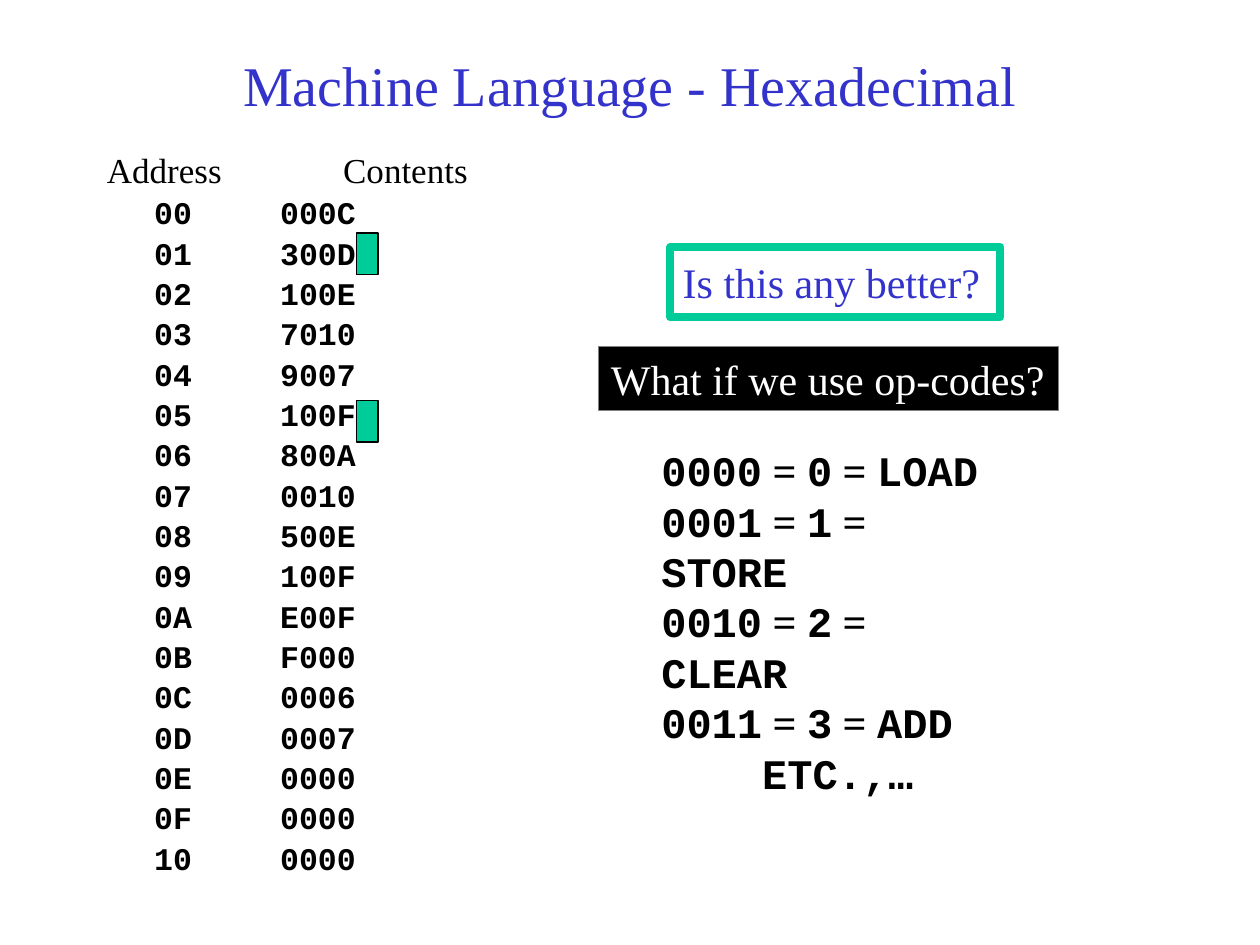
from lxml.etree import SubElement
from pptx import Presentation
from pptx.dml.color import RGBColor
from pptx.enum.shapes import MSO_SHAPE
from pptx.enum.text import MSO_ANCHOR, PP_ALIGN
from pptx.oxml.ns import qn
from pptx.util import Inches, Pt

SERIF, MONO = "Times New Roman", "Courier New"
BLUE, GREEN, BLACK, WHITE, GRAY = "3333CC", "00CC99", "000000", "FFFFFF", "808080"

TITLE = "Machine Language - Hexadecimal"
HEADINGS = ("Address", "Contents")
MEMORY = ["000C", "300D", "100E", "7010", "9007", "100F", "800A", "0010", "500E",
          "100F", "E00F", "F000", "0006", "0007", "0000", "0000", "0000"]
OP_CODES = ["LOAD", "STORE", "CLEAR", "ADD"]
MORE_CODES = "ETC.,…"
MARKER_TOPS = [3.18, 1.85]
# text, box, fill, line colour, line width, text colour
QUESTIONS = [
    ("Is this any better?", (5.32, 1.96, 2.62, 0.56), None, GREEN, 4.5, BLUE),
    ("What if we use op-codes?", (4.75, 2.75, 3.65, 0.51), BLACK, GRAY, 0.75, WHITE),
]


def rgb(value):
    return RGBColor.from_string(value)


def add_run(paragraph, text, size, font=SERIF, color=BLACK):
    """Add a run; the monospaced font is always bold here."""
    run = paragraph.add_run()
    run.text = text
    run.font.color.rgb = rgb(color)
    style = {"name": font, "size": Pt(size), "bold": font == MONO}
    for key, value in style.items():
        setattr(run.font, key, value)


def add_text_frame(slide, box, anchor=MSO_ANCHOR.TOP):
    frame = slide.shapes.add_textbox(*map(Inches, box)).text_frame
    frame.word_wrap = True
    frame.vertical_anchor = anchor
    return frame


def add_rectangle(slide, box, fill, line, width):
    rectangle = slide.shapes.add_shape(MSO_SHAPE.RECTANGLE, *map(Inches, box))
    rectangle.shadow.inherit = False
    if fill:
        rectangle.fill.solid()
        rectangle.fill.fore_color.rgb = rgb(fill)
    else:
        rectangle.fill.background()
    rectangle.line.color.rgb = rgb(line)
    rectangle.line.width = Pt(width)
    return rectangle


def next_paragraph(frame, index):
    return frame.add_paragraph() if index else frame.paragraphs[0]


def set_indent(paragraph, left, first=0):
    properties = paragraph._p.get_or_add_pPr()
    properties.set("marL", str(Inches(left)))
    properties.set("indent", str(Inches(first)))
    return properties


def add_memory(slide):
    frame = add_text_frame(slide, (0.75, 1.17, 8.5, 6))
    rows = [("\t\t".join(HEADINGS), 20, SERIF)]
    rows += [(f"\t{address:02X}\t\t{word}", 18, MONO)
             for address, word in enumerate(MEMORY)]
    for index, row in enumerate(rows):
        paragraph = next_paragraph(frame, index)
        paragraph.line_spacing = 0.9
        properties = set_indent(paragraph, 0.375, -0.375)
        before = SubElement(properties, qn("a:spcBef"))
        SubElement(before, qn("a:spcPct")).set("val", "20000")
        add_run(paragraph, *row)


def add_op_codes(slide):
    frame = add_text_frame(slide, (5.15, 3.48, 2.85, 2.1))
    for code, name in enumerate(OP_CODES):
        paragraph = next_paragraph(frame, code)
        parts = [f"{code:04b}", " = ", str(code), " = ", name]
        for position, part in enumerate(parts):
            add_run(paragraph, part, 24, SERIF if position % 2 else MONO)
            paragraph.runs[-1].font.bold = True
    paragraph = frame.add_paragraph()
    set_indent(paragraph, 0.8)
    add_run(paragraph, MORE_CODES, 24, MONO)


def main():
    deck = Presentation()
    deck.slide_width, deck.slide_height = Inches(10), Inches(7.5)
    slide = deck.slides.add_slide(deck.slide_layouts[6])

    for top in MARKER_TOPS:
        add_rectangle(slide, (2.83, top, 0.17, 0.33), GREEN, BLACK, 0.75)

    title = add_text_frame(slide, (0.75, 0.42, 8.5, 0.5), MSO_ANCHOR.MIDDLE).paragraphs[0]
    title.alignment = PP_ALIGN.CENTER
    add_run(title, TITLE, 32, color=BLUE)

    add_memory(slide)
    for text, box, fill, line, width, color in QUESTIONS:
        frame = add_rectangle(slide, box, fill, line, width).text_frame
        frame.word_wrap = False
        frame.vertical_anchor = MSO_ANCHOR.MIDDLE
        frame.paragraphs[0].alignment = PP_ALIGN.LEFT
        add_run(frame.paragraphs[0], text, 24, color=color)
    add_op_codes(slide)

    deck.save("out.pptx")


if __name__ == "__main__":
    main()
